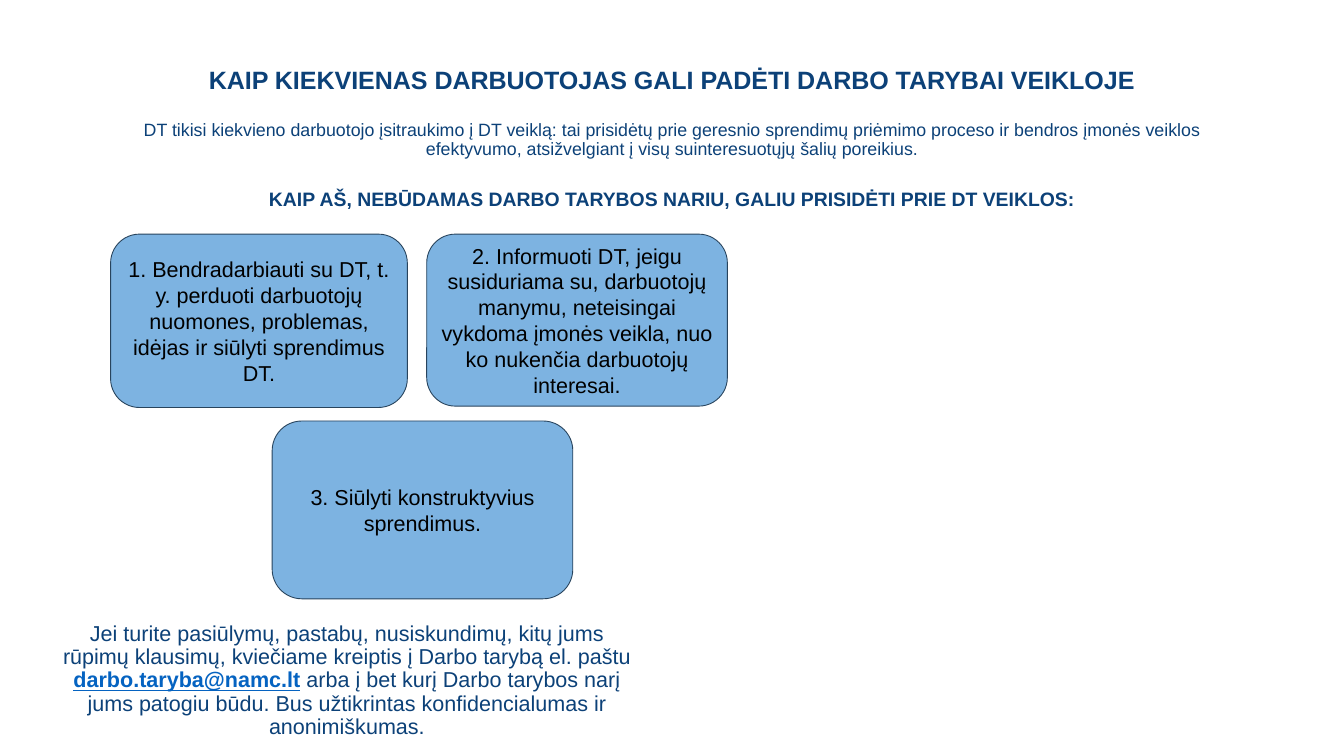
"""Builds the slide on how every employee can help the works council."""
from pptx import Presentation
from pptx.dml.color import RGBColor
from pptx.enum.shapes import MSO_SHAPE
from pptx.enum.text import MSO_ANCHOR, PP_ALIGN
from pptx.util import Inches, Pt

NAVY, BLACK, LINK = "0C4178", "000000", "0563C1"
SKY, OUTLINE = "7DB3E1", "28445D"

deck = Presentation()
deck.slide_width, deck.slide_height = Inches(20.79), Inches(11.69)
slide = deck.slides.add_slide(deck.slide_layouts[6])


def share(left, top, width, height):
    """Turns percentages of the slide into a position and size."""
    across, down = deck.slide_width / 100, deck.slide_height / 100
    return int(left * across), int(top * down), int(width * across), int(height * down)


def write(paragraph, text, size=24, color=NAVY, bold=False, underline=False, before=0, spacing=0.9):
    """Adds centred, formatted text to a paragraph."""
    paragraph.alignment = PP_ALIGN.CENTER
    paragraph.line_spacing = spacing
    paragraph.space_before = Pt(before)
    run = paragraph.add_run()
    run.text = text
    run.font.name = "Arial"
    run.font.size = Pt(size)
    run.font.bold = bold
    run.font.underline = underline
    run.font.color.rgb = RGBColor.from_string(color)


heading = slide.shapes.add_textbox(*share(6.88, 8.55, 86.24, 19.93)).text_frame
heading.word_wrap = True
write(heading.paragraphs[0], "KAIP KIEKVIENAS DARBUOTOJAS GALI PADĖTI DARBO TARYBAI VEIKLOJE",
      size=27.9, bold=True)
write(heading.add_paragraph(),
      "DT tikisi kiekvieno darbuotojo įsitraukimo į DT veiklą: tai prisidėtų prie geresnio sprendimų "
      "priėmimo proceso ir bendros įmonės veiklos efektyvumo, atsižvelgiant į visų suinteresuotųjų "
      "šalių poreikius.", size=19.8, before=29)
write(heading.add_paragraph(),
      "KAIP AŠ, NEBŪDAMAS DARBO TARYBOS NARIU, GALIU PRISIDĖTI PRIE DT VEIKLOS:",
      size=21.6, bold=True, before=34)

ways_to_help = [
    ((8.23, 30.97, 22.08, 22.93),
     "1. Bendradarbiauti su DT, t. y. perduoti darbuotojų nuomones, problemas, idėjas ir siūlyti "
     "sprendimus DT."),
    ((31.75, 30.97, 22.37, 22.75),
     "2. Informuoti DT, jeigu susiduriama su, darbuotojų manymu, neteisingai vykdoma įmonės veikla, "
     "nuo ko nukenčia darbuotojų interesai."),
    ((20.25, 55.69, 22.37, 23.52), "3. Siūlyti konstruktyvius sprendimus."),
]
for place, advice in ways_to_help:
    card = slide.shapes.add_shape(MSO_SHAPE.FLOWCHART_ALTERNATE_PROCESS, *share(*place))
    card.shadow.inherit = False
    card.fill.solid()
    card.fill.fore_color.rgb = RGBColor.from_string(SKY)
    card.line.color.rgb = RGBColor.from_string(OUTLINE)
    card.line.width = Pt(1)
    card.text_frame.word_wrap = True
    card.text_frame.vertical_anchor = MSO_ANCHOR.MIDDLE
    write(card.text_frame.paragraphs[0], advice, color=BLACK, spacing=1.0)

contact = slide.shapes.add_textbox(*share(4.14, 81.95, 43.34, 15.31)).text_frame
contact.word_wrap = True
invitation = contact.paragraphs[0]
write(invitation, "Jei turite pasiūlymų, pastabų, nusiskundimų, kitų jums rūpimų klausimų, kviečiame "
      "kreiptis į Darbo tarybą el. paštu ")
write(invitation, "darbo.taryba@namc.lt", color=LINK, bold=True, underline=True)
write(invitation, " arba į bet kurį Darbo tarybos narį jums patogiu būdu. Bus užtikrintas "
      "konfidencialumas ir anonimiškumas.")

deck.save("out.pptx")
